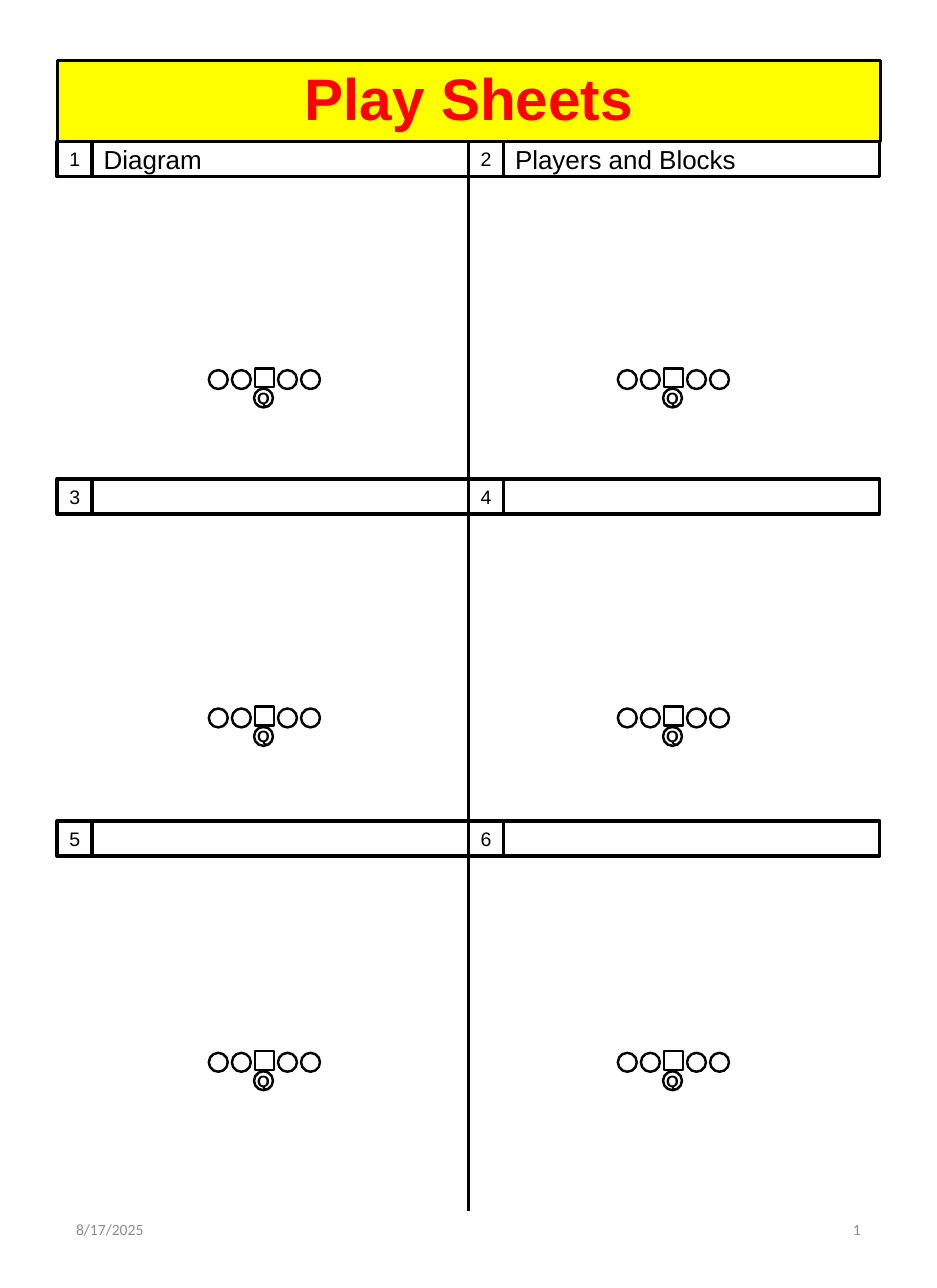
"""Build a football play sheet with six numbered diagram panels."""
from itertools import product

from lxml.etree import SubElement
from pptx import Presentation
from pptx.dml.color import RGBColor as Rgb
from pptx.enum.shapes import MSO_CONNECTOR as Link, MSO_SHAPE as Kind
from pptx.enum.text import MSO_ANCHOR as Anchor, MSO_AUTO_SIZE as Fit, PP_ALIGN as Align
from pptx.oxml.ns import qn
from pptx.util import Cm, Pt

THEME = {
    "ink": Rgb(0, 0, 0),
    "paper": Rgb(255, 255, 255),
    "banner": Rgb(255, 255, 0),
    "rule": Pt(2),
    "outline": Pt(1.5),
    "title": {"name": "Arial", "size": Pt(36), "bold": True, "color": Rgb(255, 0, 0)},
    "label": {"name": "Arial", "size": Pt(16), "bold": False, "color": Rgb(0, 0, 0)},
    "number": {"name": "Arial", "size": Pt(12), "bold": False, "color": Rgb(0, 0, 0)},
    "player": {"name": "Arial", "size": Pt(10), "bold": True, "color": Rgb(0, 0, 0)},
    "footer": {"name": "Calibri", "size": Pt(9.6), "bold": False, "color": Rgb(140, 140, 140)},
}


def write(shape, text, style, align=Align.CENTER, wrap=True, **margins):
    frame = shape.text_frame
    frame.text = text
    layout = {"auto_size": Fit.NONE, "word_wrap": wrap, "vertical_anchor": Anchor.MIDDLE}
    for key, value in {**layout, **margins}.items():
        setattr(frame, key, value)
    para = frame.paragraphs[0]
    para.alignment = align
    for key, value in THEME[style].items():
        if key == "color":
            para.font.color.rgb = value
        else:
            setattr(para.font, key, value)


def draw(kind, left, top, width, height, weight, fill=None):
    shape = slide.shapes.add_shape(kind, Cm(left), Cm(top), Cm(width), Cm(height))
    shape.shadow.inherit = False
    shape.line.color.rgb = THEME["ink"]
    shape.line.width = THEME[weight]
    if fill:
        shape.fill.solid()
        shape.fill.fore_color.rgb = THEME[fill]
    else:
        shape.fill.background()
    return shape


deck = Presentation()
deck.slide_width, deck.slide_height = Cm(20.32), Cm(27.94)
slide = deck.slides.add_slide(deck.slide_layouts[5])

title = slide.shapes.title
place = {"left": Cm(1.24), "top": Cm(1.32), "width": Cm(17.86), "height": Cm(1.75)}
for key, value in place.items():
    setattr(title, key, value)
title.fill.solid()
title.fill.fore_color.rgb = THEME["banner"]
title.line.color.rgb = THEME["ink"]
title.line.width = THEME["rule"]
write(title, "Play Sheets", "title")
title.text_frame.paragraphs[0].line_spacing = 0.9

rules = [
    (10.16, 3.07, 10.16, 26.26),
    (10.16, 17.81, 1.4, 17.81),
    (19.05, 17.81, 10.29, 17.81),
]
for ends in rules:
    rule = slide.shapes.add_connector(Link.STRAIGHT, *map(Cm, ends))
    rule.line.color.rgb = THEME["ink"]
    rule.line.width = THEME["rule"]
    SubElement(rule._element.spPr, qn("a:effectLst"))

bar = 0.76
dot = 0.41
rows = [(3.07, 8.03), (10.39, 15.37), (17.81, 22.84)]
columns = [(1.24, 4.53), (10.16, 13.4)]
labels = {1: "Diagram", 2: "Players and Blocks"}
for number, (row, column) in enumerate(product(rows, columns), 1):
    top, line_top = row
    left, line_left = column
    badge = draw(Kind.RECTANGLE, left, top, bar, bar, "rule", "paper")
    write(badge, str(number), "number", wrap=False)
    strip = draw(Kind.RECTANGLE, left + bar, top, 8.16, bar, "rule", "paper")
    if number in labels:
        write(strip, labels[number], "label", Align.LEFT)

    for step in (0, 0.5, 1.5, 2):
        draw(Kind.OVAL, line_left + step, line_top, dot, dot, "outline")
    back = draw(Kind.OVAL, line_left + 0.98, line_top + 0.4, dot, dot, "outline")
    write(back, "Q", "player", wrap=False,
          margin_left=0, margin_right=0, margin_top=0, margin_bottom=0)
    draw(Kind.RECTANGLE, line_left + 1, line_top - 0.04, dot, dot, "outline")

footers = [(1.4, "8/17/2025", Align.LEFT), (14.35, "1", Align.RIGHT)]
for left, text, align in footers:
    box = slide.shapes.add_textbox(Cm(left), Cm(25.91), Cm(4.57), Cm(1.5))
    write(box, text, "footer", align)

deck.save("out.pptx")
